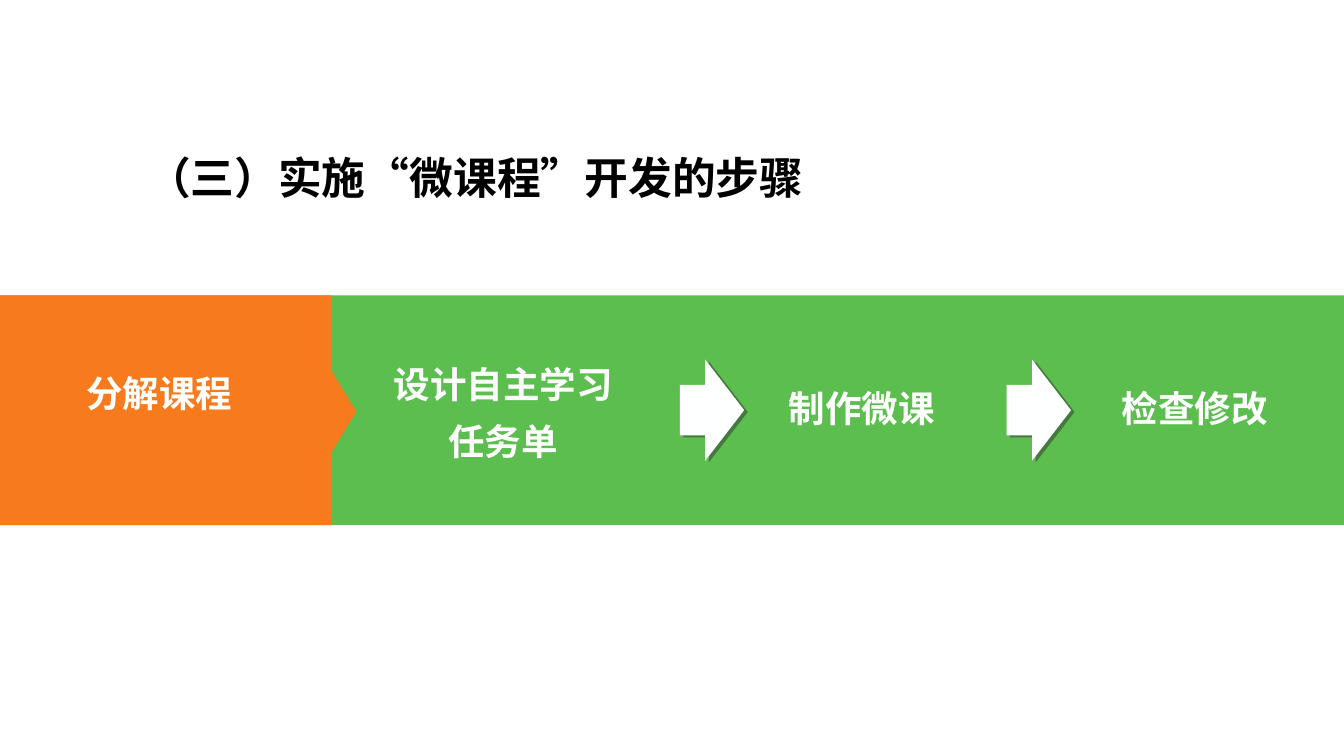
from dataclasses import dataclass

from lxml.etree import SubElement
from pptx import Presentation
from pptx.dml.color import RGBColor as RGB
from pptx.enum.shapes import MSO_SHAPE as SHAPE
from pptx.enum.text import MSO_ANCHOR as ANCHOR, MSO_AUTO_SIZE as AUTO, PP_ALIGN as ALIGN
from pptx.oxml import parse_xml
from pptx.oxml.ns import nsdecls, qn
from pptx.util import Inches, Pt


@dataclass(frozen=True)
class Theme:
    font: str = "Noto Sans CJK SC"
    title_size: int = 24
    step_size: int = 20
    ink: str = "000000"
    light: str = "FFFFFF"
    arrow: str = "FEFFFF"
    band: str = "5BBE4E"
    active: str = "F77A1D"
    shadow: str = "333333"


class StepSlide:
    def __init__(self, prs, theme):
        self.theme = theme
        self.slide = prs.slides.add_slide(prs.slide_layouts[5])

    def fill_text(self, sp, lines, size, color, align, **para):
        tf = sp.text_frame
        frame = {"word_wrap": True, "auto_size": AUTO.SHAPE_TO_FIT_TEXT,
                 "vertical_anchor": ANCHOR.MIDDLE}
        for name, value in frame.items():
            setattr(tf, name, value)
        for i, line in enumerate(lines):
            p = tf.paragraphs[0] if i == 0 else tf.add_paragraph()
            p.alignment = align
            for name, value in para.items():
                if i or name != "space_before":
                    setattr(p, name, value)
            r = p.add_run()
            r.text = line
            for name, value in {"name": self.theme.font, "size": Pt(size), "bold": True}.items():
                setattr(r.font, name, value)
            r.font.color.rgb = RGB.from_string(color)
            SubElement(r._r.get_or_add_rPr(), qn("a:ea")).set("typeface", self.theme.font)

    def title(self, text, box):
        sp = self.slide.shapes.title
        for name, value in zip(("left", "top", "width", "height"), box):
            setattr(sp, name, Inches(value))
        self.fill_text(sp, [text], self.theme.title_size, self.theme.ink, ALIGN.LEFT)

    def shape(self, kind, box, color, rotation=0):
        sp = self.slide.shapes.add_shape(kind, *map(Inches, box))
        sp.shadow.inherit = False
        sp.fill.solid()
        sp.fill.fore_color.rgb = RGB.from_string(color)
        sp.line.fill.background()
        sp.rotation = rotation
        return sp

    def arrow(self, box):
        sp = self.shape(SHAPE.RIGHT_ARROW, box, self.theme.arrow)
        sp.adjustments[1] = 0.605
        effects = sp._element.spPr.find(qn("a:effectLst"))
        effects.append(parse_xml(
            f'<a:outerShdw {nsdecls("a")} blurRad="0" dist="{Pt(2.2)}" dir="{27 * 60000}" '
            f'algn="tl" rotWithShape="0"><a:srgbClr val="{self.theme.shadow}">'
            '<a:alpha val="50000"/></a:srgbClr></a:outerShdw>'))

    def step(self, lines, box, **para):
        sp = self.slide.shapes.add_textbox(*map(Inches, box))
        self.fill_text(sp, lines, self.theme.step_size, self.theme.light, ALIGN.CENTER, **para)


def main():
    prs = Presentation()
    prs.slide_width, prs.slide_height = Inches(10.24), Inches(5.63)
    theme = Theme()
    s = StepSlide(prs, theme)

    s.title("（三）实施“微课程”开发的步骤", (1.02, 1.1, 5.91, 0.5))

    band_top, band_height = 2.25, 1.75
    s.shape(SHAPE.RECTANGLE, (0, band_top, 10.24, band_height), theme.band)
    s.shape(SHAPE.RECTANGLE, (0, band_top, 2.53, band_height), theme.active)
    s.shape(SHAPE.ISOSCELES_TRIANGLE, (2.18, 3.01, 0.82, 0.25), theme.active, 90)

    s.step(["分解课程"], (0, 2.77, 2.43, 0.44))
    s.step(["设计自主学习", "任务单"], (2.71, 2.6, 2.25, 1.04),
           line_spacing=1.14, space_before=Pt(4))
    for arrow_left, text_left, label in ((5.18, 5.46, "制作微课"), (7.67, 8, "检查修改")):
        s.arrow((arrow_left, 2.74, 0.49, 0.77))
        s.step([label], (text_left, 2.89, 2.21, 0.44))

    prs.save("out.pptx")


if __name__ == "__main__":
    main()
